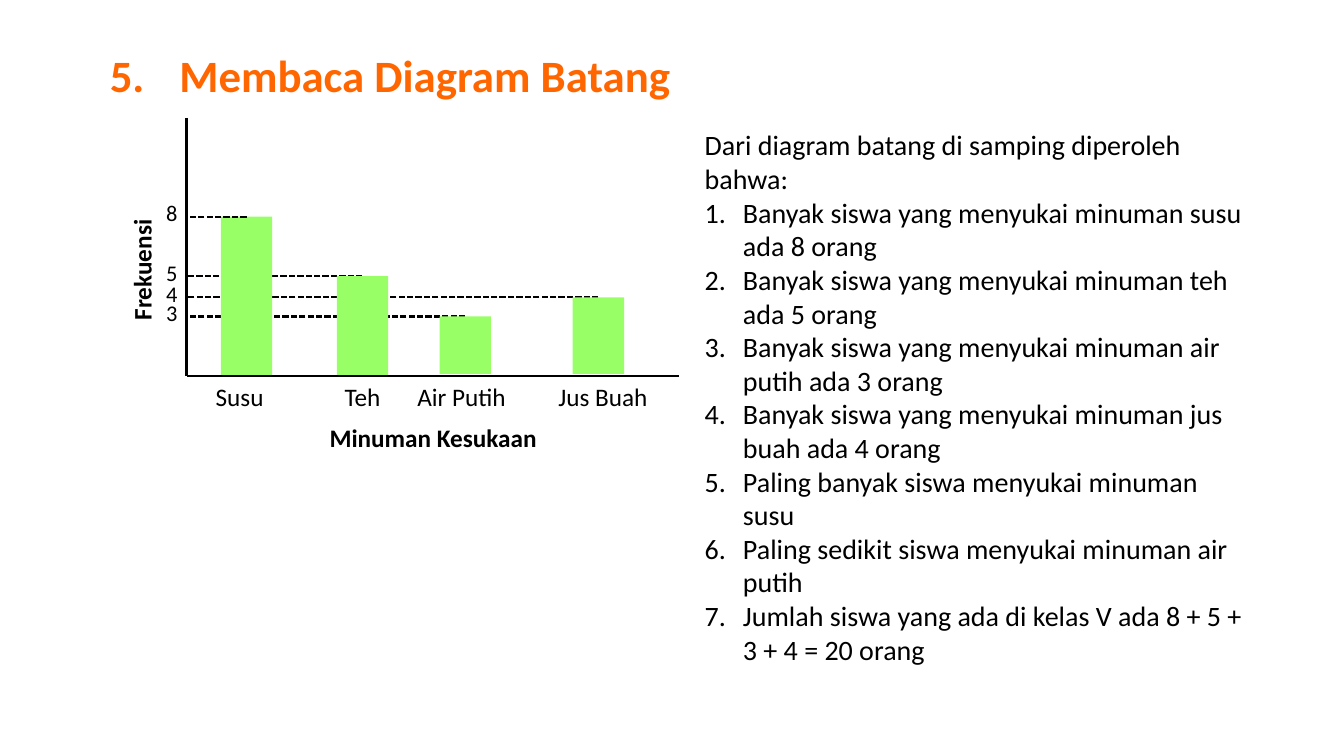
from dataclasses import dataclass

from lxml import etree
from pptx import Presentation
from pptx.dml.color import RGBColor
from pptx.enum import dml, shapes, text
from pptx.oxml import ns
from pptx.util import Inches, Pt


@dataclass
class Theme:
    font: str = "Calibri"
    ink: str = "000000"
    title: str = "FF6600"
    bar: str = "99FF66"
    title_size: int = 32
    body_size: int = 20
    label_size: int = 18
    value_size: int = 16
    line_width: float = 1.5


class Builder:
    def __init__(self, s, theme):
        self.s, self.theme = s, theme

    def text(self, box, lines, size, color=None, bold=False, wrap=False,
             rotation=0, tabs=(), numbered_from=None):
        """Add a text box; paragraphs from index numbered_from are numbered."""
        sp = self.s.shapes.add_textbox(*map(Inches, box))
        sp.rotation = rotation
        tf = sp.text_frame
        tf.word_wrap = wrap
        tf.auto_size = text.MSO_AUTO_SIZE.SHAPE_TO_FIT_TEXT
        for i, line in enumerate(lines):
            p = tf.paragraphs[0] if i == 0 else tf.add_paragraph()
            pPr = p._p.get_or_add_pPr()
            if numbered_from is not None and i >= numbered_from:
                pPr.set("marL", str(Inches(0.38)))
                pPr.set("indent", str(-Inches(0.38)))
                etree.SubElement(pPr, ns.qn("a:buFont"), typeface="+mj-lt")
                etree.SubElement(pPr, ns.qn("a:buAutoNum"), type="arabicPeriod")
            if tabs:
                stops = etree.SubElement(pPr, ns.qn("a:tabLst"))
                for pos in tabs:
                    etree.SubElement(stops, ns.qn("a:tab"), pos=str(Inches(pos)), algn="l")
            r = p.add_run()
            r.text = line
            r.font.name, r.font.size, r.font.bold = self.theme.font, Pt(size), bold
            r.font.color.rgb = RGBColor.from_string(color or self.theme.ink)
        return sp

    def line(self, x1, y1, x2, y2, dashed=False):
        cx = self.s.shapes.add_connector(
            shapes.MSO_CONNECTOR.STRAIGHT, *map(Inches, (x1, y1, x2, y2)))
        cx.line.color.rgb = RGBColor.from_string(self.theme.ink)
        cx.line.width = Pt(self.theme.line_width)
        if dashed:
            cx.line.dash_style = dml.MSO_LINE.SQUARE_DOT
        etree.SubElement(cx._element.spPr, ns.qn("a:effectLst"))
        return cx

    def bar(self, x, y, w, h):
        sp = self.s.shapes.add_shape(
            shapes.MSO_SHAPE.RECTANGLE, *map(Inches, (x, y, w, h)))
        sp.shadow.inherit = False
        sp.fill.solid()
        sp.fill.fore_color.rgb = RGBColor.from_string(self.theme.bar)
        sp.line.fill.background()
        return sp


AXIS_X, AXIS_Y = 1.85, 3.73
BAR_W = 0.51
# drink, students, bar left, bar top, bar bottom
DRINKS = [
    ("Susu", 8, 2.19, 2.15, 3.72),
    ("Teh", 5, 3.34, 2.74, 3.73),
    ("Air Putih", 3, 4.36, 3.14, 3.71),
    ("Jus Buah", 4, 5.68, 2.95, 3.71),
]
FINDINGS = [
    "Dari diagram batang di samping diperoleh bahwa:",
    "Banyak siswa yang menyukai minuman susu ada 8 orang",
    "Banyak siswa yang menyukai minuman teh ada 5 orang",
    "Banyak siswa yang menyukai minuman air putih ada 3 orang",
    "Banyak siswa yang menyukai minuman jus buah ada 4 orang",
    "Paling banyak siswa menyukai minuman susu",
    "Paling sedikit siswa menyukai minuman air putih",
    "Jumlah siswa yang ada di kelas V ada 8 + 5 + 3 + 4 = 20 orang",
]


def main():
    prs = Presentation()
    prs.slide_width, prs.slide_height = Inches(13.33), Inches(7.5)
    theme = Theme()
    b = Builder(prs.slides.add_slide(prs.slide_layouts[6]), theme)

    # Title
    b.text((0.99, 0.42, 5.81, 0.64), ["5.\tMembaca Diagram Batang"],
           theme.title_size, theme.title, bold=True, tabs=[0.69])

    # Guides behind the bars; the tallest bar's guide lies in front
    def guide(x, top):
        return b.line(x + BAR_W / 2, top, AXIS_X, top, dashed=True)

    guides = [guide(x, top) for _, _, x, top, _ in DRINKS[1:]]
    bars = [b.bar(x, top, BAR_W, bottom - top) for _, _, x, top, bottom in DRINKS]
    guides.insert(0, guide(*DRINKS[0][2:4]))
    for cx, sp in zip(guides, bars):
        cx.begin_connect(sp, 0)

    # Axes
    b.line(AXIS_X, 1.17, AXIS_X, AXIS_Y)
    b.line(6.73, AXIS_Y, AXIS_X, AXIS_Y)

    # Value and category labels
    for _, value, _, top, _ in DRINKS:
        b.text((1.55, top - 0.22, 0.32, 0.37), [str(value)], theme.value_size)
    b.text((2.04, AXIS_Y, 4.59, 0.4), ["\t".join(d[0] for d in DRINKS)],
           theme.label_size, tabs=[1.28, 2, 3.4])

    # Axis titles
    b.text((0.8, 2.47, 1.21, 0.4), ["Frekuensi"], theme.label_size,
           bold=True, rotation=270)
    b.text((3.17, 4.14, 2.27, 0.4), ["Minuman Kesukaan"], theme.label_size, bold=True)

    # Findings
    b.text((6.89, 1.22, 5.55, 5.49), FINDINGS, theme.body_size,
           wrap=True, numbered_from=1)

    prs.save("out.pptx")


if __name__ == "__main__":
    main()
